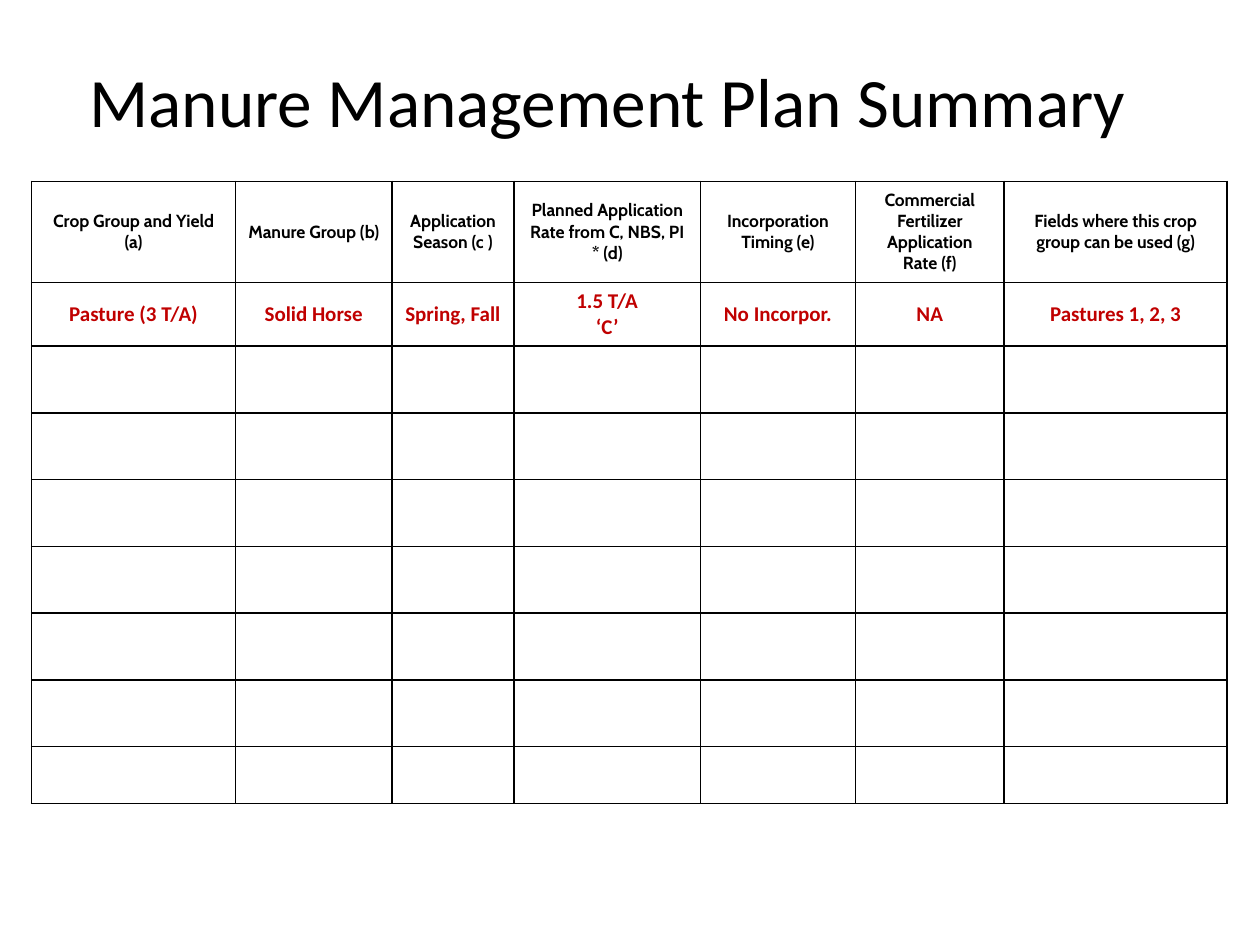
from lxml.etree import SubElement
from pptx import Presentation
from pptx.dml.color import RGBColor
from pptx.enum.text import MSO_ANCHOR as Anchor, PP_ALIGN as Align
from pptx.oxml.ns import qn
from pptx.util import Inches, Pt

# Content
TITLE = "Manure Management Plan Summary"
HEADINGS = [
    "Crop Group and Yield (a)",
    "Manure Group (b)",
    "Application Season (c )",
    "Planned Application Rate from C, NBS, PI * (d)",
    "Incorporation Timing (e)",
    "Commercial Fertilizer Application Rate (f)",
    "Fields where this crop group can be used (g)",
]
PASTURE = ["Pasture (3 T/A)", "Solid Horse", "Spring, Fall", "1.5 T/A\n‘C’",
           "No Incorpor.", "NA", "Pastures 1, 2, 3"]
BLANK_ROWS = 7

# Look and layout, in inches
COLORS = {"text": "000000", "entry": "C00000", "cell": "FFFFFF", "border": "000000"}
COLUMN_WIDTHS = [1.62, 1.24, 0.97, 1.48, 1.23, 1.18, 1.77]
ROW_HEIGHTS = [0.8, 0.5] + [0.53] * (BLANK_ROWS - 1) + [0.45]


def write(frame, text, size, font="Calibri", color="text", bold=False, align=Align.CENTER):
    """Fill a text frame, one paragraph per line, in a single format."""
    frame.text = text
    for paragraph in frame.paragraphs:
        paragraph.alignment = align
        for run in paragraph.runs:
            run.font.size = Pt(size)
            run.font.name = font
            run.font.bold = bold
            run.font.color.rgb = RGBColor.from_string(COLORS[color])


def style_cell(cell):
    """Give a cell thin borders on all sides and a plain fill."""
    cell.vertical_anchor = Anchor.MIDDLE
    properties = cell._tc.get_or_add_tcPr()
    for side in ("a:lnL", "a:lnR", "a:lnT", "a:lnB"):
        line = SubElement(properties, qn(side), w=str(Pt(1)))
        solid = SubElement(line, qn("a:solidFill"))
        SubElement(solid, qn("a:srgbClr"), val=COLORS["border"])
    cell.fill.solid()
    cell.fill.fore_color.rgb = RGBColor.from_string(COLORS["cell"])


def add_title(slide):
    title = slide.shapes.title
    title.left, title.top = Inches(0.71), Inches(0.39)
    title.width, title.height = Inches(8.91), Inches(0.8)
    frame = title.text_frame
    frame.margin_left = frame.margin_right = 0
    frame.vertical_anchor = Anchor.MIDDLE
    write(frame, TITLE, 39.6, align=Align.LEFT)


def add_summary(slide):
    summary = slide.shapes.add_table(
        len(ROW_HEIGHTS), len(COLUMN_WIDTHS), Inches(0.25), Inches(1.44),
        Inches(sum(COLUMN_WIDTHS)), Inches(sum(ROW_HEIGHTS))).table
    summary.first_row = summary.horz_banding = False
    for column, width in zip(summary.columns, COLUMN_WIDTHS):
        column.width = Inches(width)
    for row, height in zip(summary.rows, ROW_HEIGHTS):
        row.height = Inches(height)
    for cell in summary.iter_cells():
        style_cell(cell)
    for col, (heading, entry) in enumerate(zip(HEADINGS, PASTURE)):
        write(summary.cell(0, col).text_frame, heading, 10, font="Cabin", bold=True)
        write(summary.cell(1, col).text_frame, entry, 12, color="entry", bold=True)


def main():
    deck = Presentation()
    deck.slide_width, deck.slide_height = Inches(10), Inches(7.5)
    slide = deck.slides.add_slide(deck.slide_layouts[5])
    add_title(slide)
    add_summary(slide)
    deck.save("out.pptx")


if __name__ == "__main__":
    main()
